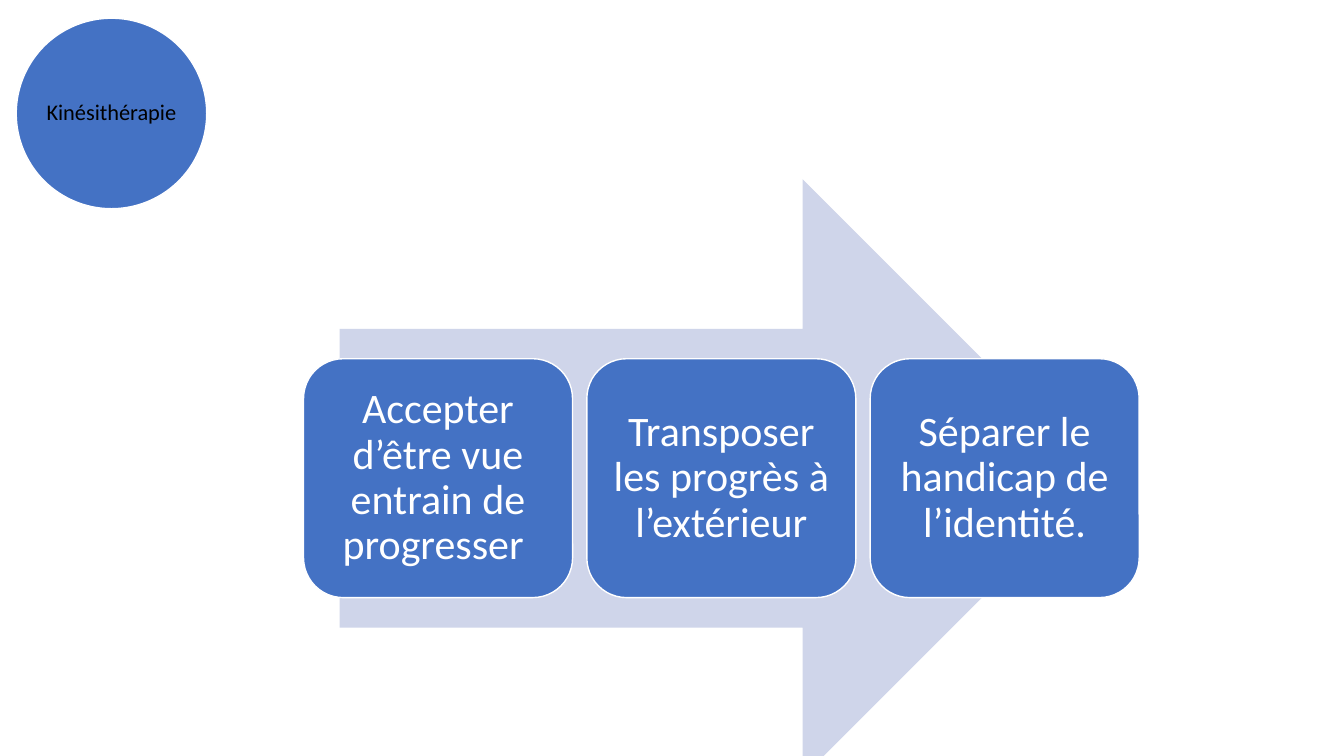
"""Build a slide showing three therapy steps along a wide arrow."""
from pptx import Presentation
from pptx.dml.color import RGBColor
from pptx.enum.shapes import MSO_SHAPE as Preset
from pptx.enum.text import MSO_ANCHOR as Anchor, PP_ALIGN as Align
from pptx.util import Cm, Pt

BLUE, PALE_BLUE, WHITE, BLACK = "4472C4", "CFD5EA", "FFFFFF", "000000"
STEPS = [
    "Accepter d’être vue entrain de progresser ",
    "Transposer les progrès à l’extérieur",
    "Séparer le handicap de l’identité.",
]
STEP_LEFT, STEP_TOP, STEP_WIDTH, STEP_HEIGHT = 7.65, 9.04, 6.78, 6.02
STEP_PITCH = 7.14


def set_color(color_format, value):
    """Apply a hex colour to a fill or font colour."""
    color_format.rgb = RGBColor.from_string(value)


def add_figure(slide, preset, left, top, width, height, fill, line=None):
    """Add a flat preset shape, measured in centimetres."""
    shape = slide.shapes.add_shape(preset, Cm(left), Cm(top), Cm(width), Cm(height))
    shape.shadow.inherit = False
    shape.fill.solid()
    set_color(shape.fill.fore_color, fill)
    if line:
        shape.line.width = Pt(1)
        set_color(shape.line.color, line)
    else:
        shape.line.fill.background()
    return shape


def write_text(shape, text, *, size, color, inset, font="Calibri"):
    """Write centred, wrapped text inside a shape."""
    frame = shape.text_frame
    frame.word_wrap = True
    frame.vertical_anchor = Anchor.MIDDLE
    frame.margin_left = frame.margin_right = Cm(inset)
    frame.margin_top = frame.margin_bottom = Cm(inset)
    paragraph = frame.paragraphs[0]
    paragraph.alignment = Align.CENTER
    paragraph.line_spacing = 0.9
    run = paragraph.add_run()
    run.text = text
    run.font.name = font
    run.font.size = Pt(size)
    set_color(run.font.color, color)


def add_topic(slide, text):
    """Add the round topic label in the corner."""
    circle = add_figure(slide, Preset.OVAL, 0.41, 0.46, 4.8, 4.8, BLUE, WHITE)
    write_text(circle, text, size=16, color=BLACK, inset=0.05)


def add_steps(slide, steps):
    """Add the arrow and the evenly spaced step boxes over it."""
    add_figure(slide, Preset.RIGHT_ARROW, 8.56, 4.52, 19.2, 15.06, PALE_BLUE)
    for index, text in enumerate(steps):
        left = STEP_LEFT + index * STEP_PITCH
        box = add_figure(slide, Preset.ROUNDED_RECTANGLE, left, STEP_TOP,
                         STEP_WIDTH, STEP_HEIGHT, BLUE, WHITE)
        write_text(box, text, size=30, color=WHITE, inset=0.3)


def main():
    """Create and save the presentation."""
    presentation = Presentation()
    presentation.slide_width = Cm(33.87)
    presentation.slide_height = Cm(19.05)
    slide = presentation.slides.add_slide(presentation.slide_layouts[6])
    add_topic(slide, "Kinésithérapie")
    add_steps(slide, STEPS)
    presentation.save("out.pptx")


if __name__ == "__main__":
    main()
